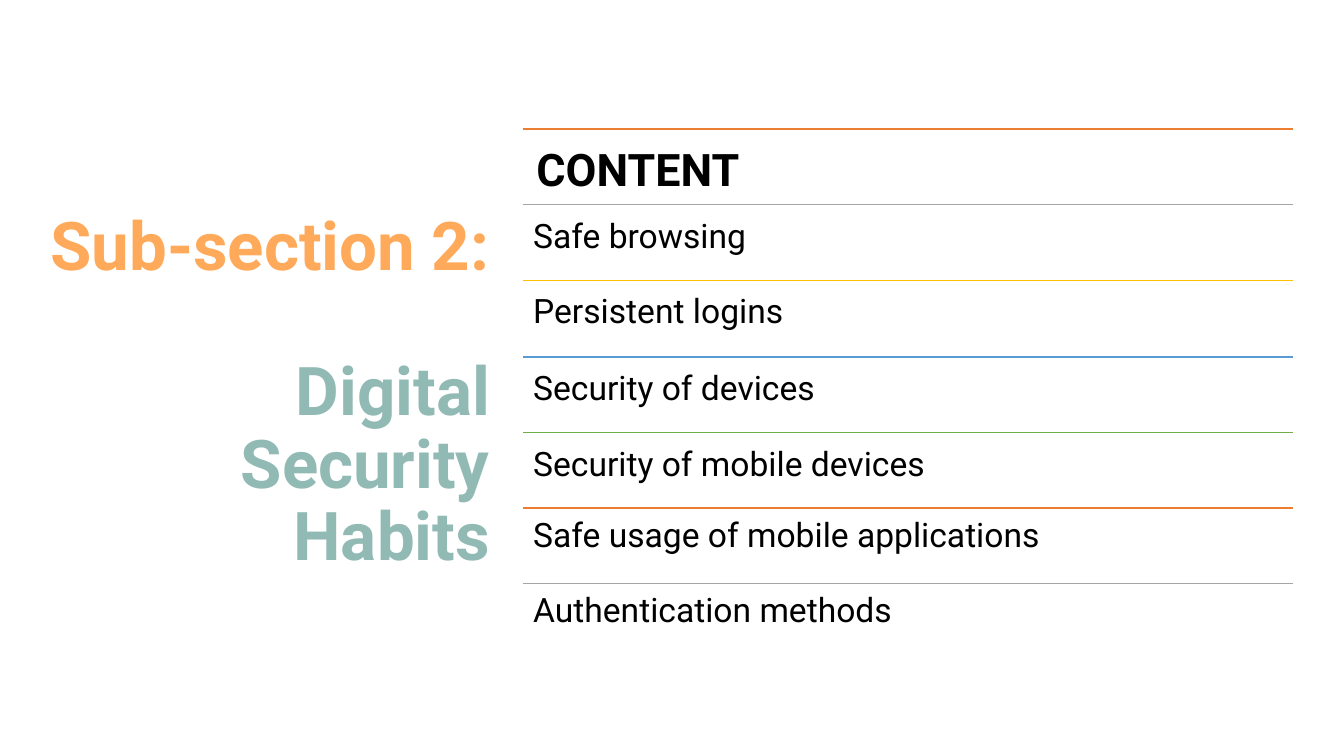
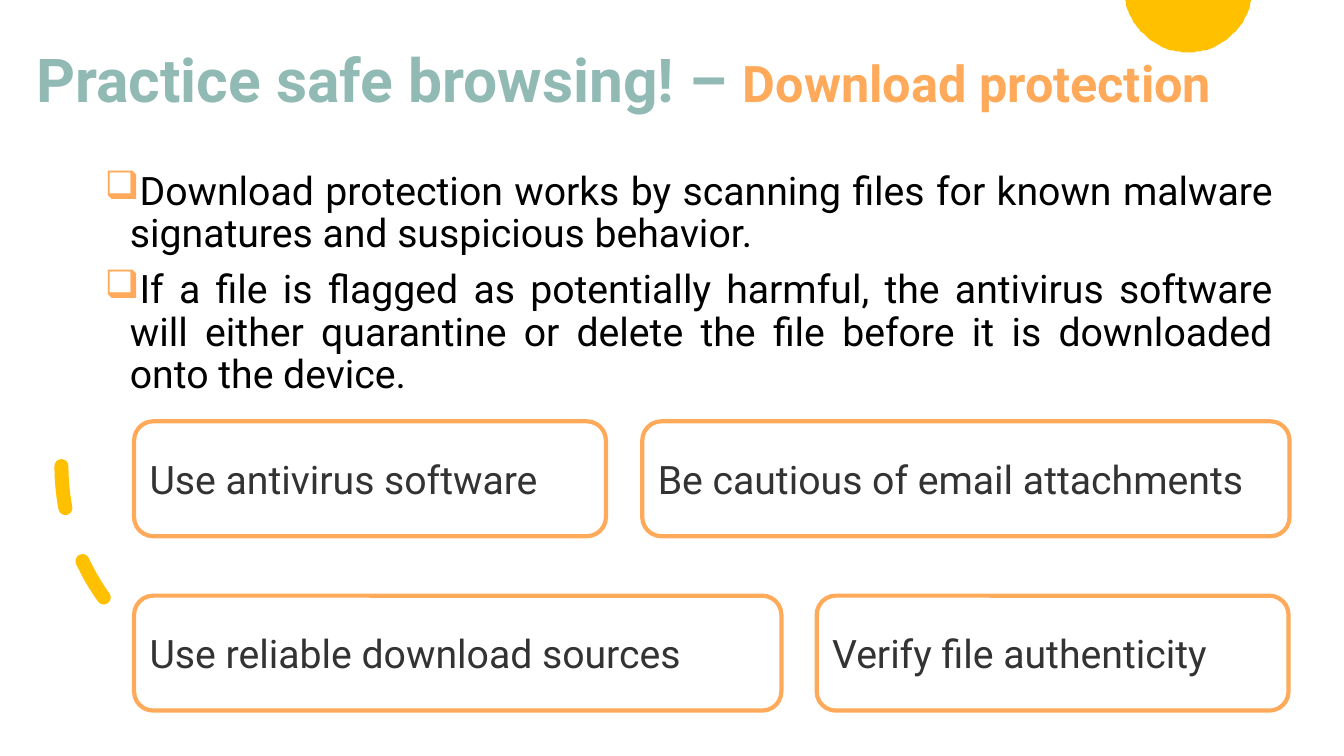
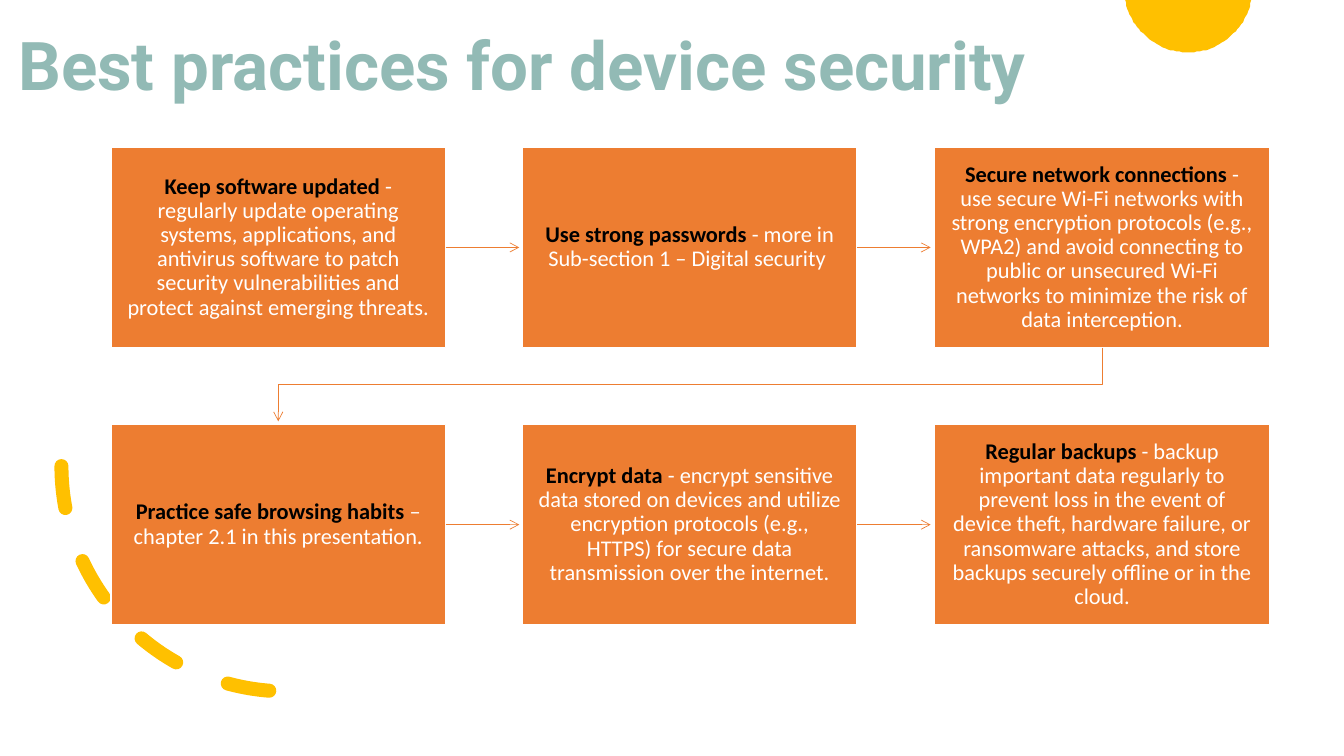
"""Build three slides on digital security habits."""
from math import asin, cos, pi, sin

from lxml import etree
from pptx import Presentation
from pptx.dml.color import RGBColor
from pptx.enum.dml import MSO_LINE
from pptx.enum.shapes import MSO_CONNECTOR, MSO_SHAPE
from pptx.enum.text import MSO_ANCHOR, MSO_AUTO_SIZE, PP_ALIGN
from pptx.oxml.ns import qn
from pptx.util import Pt

LEFT, RIGHT = PP_ALIGN.LEFT, PP_ALIGN.RIGHT
CENTER, JUSTIFY = PP_ALIGN.CENTER, PP_ALIGN.JUSTIFY
TOP, MIDDLE = MSO_ANCHOR.TOP, MSO_ANCHOR.MIDDLE
FIXED = MSO_AUTO_SIZE.NONE
RECT, ROUND, ARC = MSO_SHAPE.RECTANGLE, MSO_SHAPE.ROUNDED_RECTANGLE, MSO_SHAPE.ARC
PROCESS = MSO_SHAPE.FLOWCHART_ALTERNATE_PROCESS
STRAIGHT, ELBOW = MSO_CONNECTOR.STRAIGHT, MSO_CONNECTOR.ELBOW
DASH = MSO_LINE.DASH

PX = 9144
WIDTH, HEIGHT = 1333, 750

BLACK = RGBColor(0x00, 0x00, 0x00)
WHITE = RGBColor(0xFF, 0xFF, 0xFF)
DARK = RGBColor(0x33, 0x33, 0x33)
PEACH = RGBColor(0xFF, 0xAA, 0x5A)
SAGE = RGBColor(0x92, 0xBA, 0xB5)
ORANGE = RGBColor(0xED, 0x7D, 0x31)
GRAY = RGBColor(0xA5, 0xA5, 0xA5)
GOLD = RGBColor(0xFF, 0xC0, 0x00)
BLUE = RGBColor(0x5B, 0x9B, 0xD5)
GREEN = RGBColor(0x70, 0xAD, 0x47)

HEAD = {"name": "Roboto", "bold": True}
BODY = {"name": "Roboto", "bold": False}
CARD = {"name": "Calibri", "size": Pt(16)}

TOPICS = [
    ("CONTENT", ORANGE, 32, 13, 1),
    ("Safe browsing", GRAY, 24, 10, 1),
    ("Persistent logins", GOLD, 24, 10, 1),
    ("Security of devices", BLUE, 24, 10, 1),
    ("Security of mobile devices", GREEN, 24, 10, 1),
    ("Safe usage of mobile applications", ORANGE, 24, 10, 0.9),
    ("Authentication methods", GRAY, 24, 10, 0.9),
]
POINTS = [
    "Download protection works by scanning files for known malware signatures and suspicious behavior.",
    "If a file is flagged as potentially harmful, the antivirus software will either quarantine "
    "or delete the file before it is downloaded onto the device.",
]
TIPS = [
    ("Use antivirus software", PROCESS, 133, 418, 468),
    ("Be cautious of email attachments", ROUND, 637, 418, 642),
    ("Use reliable download sources", ROUND, 133, 591, 642),
    ("Verify file authenticity", ROUND, 810, 591, 468),
]
STEPS = [
    ("Keep software updated ", "- regularly update operating systems, applications, and antivirus "
     "software to patch security vulnerabilities and protect against emerging threats."),
    ("Use strong passwords ", "- more in Sub-section 1 – Digital security "),
    ("Secure network connections ", "- use secure Wi-Fi networks with strong encryption protocols "
     "(e.g., WPA2) and avoid connecting to public or unsecured Wi-Fi networks to minimize the "
     "risk of data interception."),
    ("Practice safe browsing habits ", "– chapter 2.1 in this presentation."),
    ("Encrypt data ", "- encrypt sensitive data stored on devices and utilize encryption "
     "protocols (e.g., HTTPS) for secure data transmission over the internet."),
    ("Regular backups ", "- backup important data regularly to prevent loss in the event of "
     "device theft, hardware failure, or ransomware attacks, and store backups securely offline "
     "or in the cloud."),
]


def emu(*sizes):
    return [round(size * PX) for size in sizes]


def apply(target, values):
    for name, value in values.items():
        setattr(target, name, value)


def write(frame, paras, align=LEFT, anchor=TOP, inset=(10, 5), space=0.9):
    wide, high = emu(*inset)
    apply(frame, {"word_wrap": True, "auto_size": FIXED, "vertical_anchor": anchor,
                  "margin_left": wide, "margin_right": wide,
                  "margin_top": high, "margin_bottom": high})
    for i, runs in enumerate(paras):
        para = frame.add_paragraph() if i else frame.paragraphs[0]
        apply(para, {"alignment": align, "line_spacing": space})
        for text, look, color in runs:
            run = para.add_run()
            run.text = text
            apply(run.font, look)
            run.font.color.rgb = color
    return frame.paragraphs


def set_title(slide, box, paras, align=LEFT):
    title = slide.shapes.title
    apply(title, dict(zip(("left", "top", "width", "height"), emu(*box))))
    return write(title.text_frame, paras, align, MIDDLE)


def add_text(slide, box, paras, **style):
    return write(slide.shapes.add_textbox(*emu(*box)).text_frame, paras, **style)


def add_box(slide, kind, box, fill, line, weight):
    shape = slide.shapes.add_shape(kind, *emu(*box))
    shape.shadow.inherit = False
    shape.fill.solid()
    shape.fill.fore_color.rgb = fill
    shape.line.color.rgb = line
    shape.line.width = Pt(weight)
    return shape


def add_line(slide, kind, ends, color, weight, arrow=False):
    line = slide.shapes.add_connector(kind, *emu(*ends))
    line.line.color.rgb = color
    line.line.width = Pt(weight)
    if arrow:
        etree.SubElement(line.line._get_or_add_ln(), qn("a:tailEnd"), type="arrow")
    etree.SubElement(line._element.spPr, qn("a:effectLst"))
    return line


def add_decor(slide):
    mid, half, drop = 1178.5, 62.5, 52
    radius = (half ** 2 + drop ** 2) / (2 * drop)
    start = asin((radius - drop) / radius)
    turns = [start + (pi - 2 * start) * i / 60 for i in range(61)]
    dots = [(mid + radius * cos(t), drop - radius + radius * sin(t)) for t in turns]
    path = slide.shapes.build_freeform(*dots[0], scale=PX)
    path.add_line_segments(dots[1:], close=True)
    sun = path.convert_to_shape()
    sun.shadow.inherit = False
    sun.fill.solid()
    sun.fill.fore_color.rgb = GOLD
    sun.line.fill.background()

    arc = add_box(slide, ARC, (61, 239, 447, 447), GOLD, GOLD, 10)
    arc.fill.background()
    arc.rotation = 90
    arc._element.spPr.find(qn("a:xfrm")).set("flipV", "1")
    arc.line.dash_style = DASH
    arc.line._get_or_add_ln().set("cap", "rnd")


def build_agenda(slide):
    look = {**HEAD, "size": Pt(48)}
    paras = set_title(slide, (38, 85, 458, 611), [
        [("Sub-section 2:", look, PEACH)], [("Digital Security Habits", look, SAGE)]], RIGHT)
    paras[0].space_after = Pt(52)
    left, wide = 519, 763
    for i, (text, color, size, inset, space) in enumerate(TOPICS):
        top = 128 + round(75.2 * i)
        add_line(slide, STRAIGHT, (left, top, left + wide, top), color, 1)
        look = {**BODY, "size": Pt(size), "bold": i == 0}
        add_text(slide, (left, top, wide, 75), [[(text, look, BLACK)]],
                 inset=(inset, inset), space=space)


def build_browsing(slide):
    set_title(slide, (26, 40, 1216, 85), [[
        ("Practice safe browsing! – ", {**HEAD, "size": Pt(43.2)}, SAGE),
        ("Download protection", {**HEAD, "size": Pt(36)}, PEACH)]])
    add_decor(slide)
    look = {**BODY, "size": Pt(28)}
    paras = add_text(slide, (94, 165, 1178, 267),
                     [[(text, look, BLACK)] for text in POINTS], align=JUSTIFY)
    for para in paras:
        para.space_before = Pt(10)
        props = para._p.get_or_add_pPr()
        props.set("marL", str(25 * PX))
        props.set("indent", str(-25 * PX))
        tint = etree.SubElement(props, qn("a:buClr"))
        etree.SubElement(tint, qn("a:srgbClr"), val=str(PEACH))
        etree.SubElement(props, qn("a:buChar"), char="❑")
    for text, kind, left, top, wide in TIPS:
        tip = add_box(slide, kind, (left, top, wide, 114), WHITE, PEACH, 3)
        write(tip.text_frame, [[(text, look, DARK)]], anchor=MIDDLE, space=1)


def build_devices(slide):
    set_title(slide, (8, 26, 1045, 85), [[
        ("Best practices for device security", {**HEAD, "size": Pt(48)}, SAGE)]])
    add_decor(slide)
    wide, high, cols = 332, 199, 3
    spots = [(110 + round(408.5 * (i % cols)), 146 + 275 * (i // cols))
             for i in range(len(STEPS))]
    for i, ((left, top), (name, text)) in enumerate(zip(spots, STEPS)):
        card = add_box(slide, RECT, (left, top, wide, high), ORANGE, WHITE, 1)
        write(card.text_frame, [[(name, {**CARD, "bold": True}, BLACK),
                                 (text, {**CARD, "bold": False}, WHITE)]],
              CENTER, MIDDLE, (16, 17))
        if i % cols < cols - 1:
            mid = top + high / 2
            arrow = add_line(slide, STRAIGHT, (left + wide, mid, left + wide + 73, mid),
                             ORANGE, 0.5, True)
            arrow.begin_connect(card, 3)
    x1, y1 = spots[cols - 1][0] + wide / 2, spots[0][1] + high
    x2, y2 = spots[cols][0] + wide / 2, spots[cols][1] - 3
    mid_x, mid_y = (x1 + x2) / 2, (y1 + y2) / 2
    run, rise = (y2 - y1) / 2, (x1 - x2) / 2
    turn = add_line(slide, ELBOW, (mid_x - run, mid_y - rise, mid_x + run, mid_y + rise),
                    ORANGE, 0.5, True)
    turn._element.spPr.find(qn("a:xfrm")).set("rot", "5400000")


def main():
    deck = Presentation()
    deck.slide_width, deck.slide_height = emu(WIDTH, HEIGHT)
    for build in (build_agenda, build_browsing, build_devices):
        build(deck.slides.add_slide(deck.slide_layouts[5]))
    deck.save("out.pptx")


if __name__ == "__main__":
    main()
